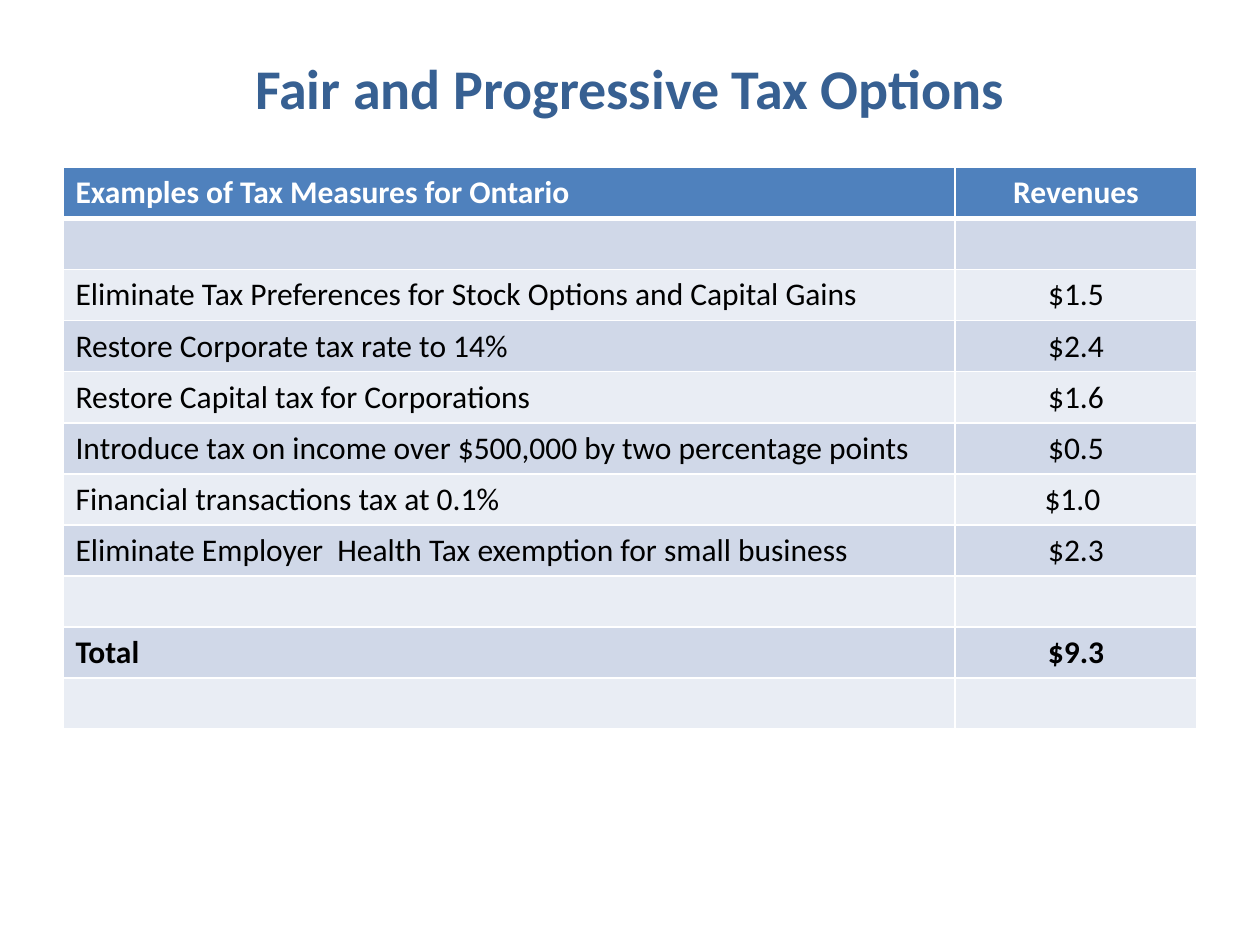
"""Build the tax options slide with its table of revenue measures."""
from lxml import etree
from pptx import Presentation
from pptx.dml.color import RGBColor
from pptx.enum import text
from pptx.oxml import ns
from pptx.util import Inches, Pt

HEADING = "Fair and Progressive Tax Options"
MEASURES = [
    ("Examples of Tax Measures for Ontario", "Revenues"),
    ("", ""),
    ("Eliminate Tax Preferences for Stock Options and Capital Gains", "$1.5"),
    ("Restore Corporate tax rate to 14%", "$2.4"),
    ("Restore Capital tax for Corporations", "$1.6"),
    ("Introduce tax on income over $500,000 by two percentage points", "$0.5"),
    ("Financial transactions tax at 0.1%", "$1.0 "),
    ("Eliminate Employer  Health Tax exemption for small business", "$2.3"),
    ("", ""),
    ("Total", "$9.3"),
    ("", ""),
]
COLUMN_WIDTHS = (7.08, 1.92)
ALIGNMENTS = (text.PP_ALIGN.LEFT, text.PP_ALIGN.CENTER)
TABLE_HEIGHT = 4.46

NAVY = RGBColor(0x37, 0x60, 0x92)
BLUE = RGBColor(0x4F, 0x81, 0xBD)
BANDS = (RGBColor(0xE9, 0xED, 0xF4), RGBColor(0xD0, 0xD8, 0xE8))
WHITE = RGBColor(0xFF, 0xFF, 0xFF)
BLACK = RGBColor(0, 0, 0)


def write(frame, words, size=18, color=BLACK, bold=False, align=ALIGNMENTS[0]):
    paragraph = frame.paragraphs[0]
    paragraph.alignment = align
    paragraph.font.size = Pt(size)
    if words:
        run = paragraph.add_run()
        run.text = words
        run.font.name = "Calibri"
        run.font.size = Pt(size)
        run.font.bold = bold
        run.font.color.rgb = color


def draw_borders(cell, top, bottom):
    properties = cell._tc.get_or_add_tcPr()
    edges = (("L", 1), ("R", 1), ("T", top), ("B", bottom))
    for position, (side, width) in enumerate(edges):
        line = etree.Element(ns.qn(f"a:ln{side}"), w=str(Pt(width)))
        fill = etree.SubElement(line, ns.qn("a:solidFill"))
        etree.SubElement(fill, ns.qn("a:srgbClr"), val=str(WHITE))
        properties.insert(position, line)


def add_heading(slide):
    heading = slide.shapes.add_textbox(Inches(0.5), Inches(0.3), Inches(9), Inches(0.78))
    frame = heading.text_frame
    frame.word_wrap = True
    frame.vertical_anchor = text.MSO_ANCHOR.MIDDLE
    write(frame, HEADING, size=32, color=NAVY, bold=True, align=text.PP_ALIGN.CENTER)


def add_measures(slide):
    measures = slide.shapes.add_table(
        len(MEASURES), len(COLUMN_WIDTHS), Inches(0.5), Inches(1.33),
        Inches(sum(COLUMN_WIDTHS)), Inches(TABLE_HEIGHT)).table
    for column, width in zip(measures.columns, COLUMN_WIDTHS):
        column.width = Inches(width)
    for row, entries in enumerate(MEASURES):
        header = row == 0
        for column, words in enumerate(entries):
            cell = measures.cell(row, column)
            cell.fill.solid()
            cell.fill.fore_color.rgb = BLUE if header else BANDS[row % 2]
            draw_borders(cell, top=3 if row == 1 else 1, bottom=3 if header else 1)
            write(cell.text_frame, words, color=WHITE if header else BLACK,
                  bold=header or entries[0] == "Total", align=ALIGNMENTS[column])


def main():
    deck = Presentation()
    deck.slide_width, deck.slide_height = Inches(10), Inches(7.5)
    slide = deck.slides.add_slide(deck.slide_layouts[6])
    add_heading(slide)
    add_measures(slide)
    deck.save("out.pptx")


if __name__ == "__main__":
    main()
